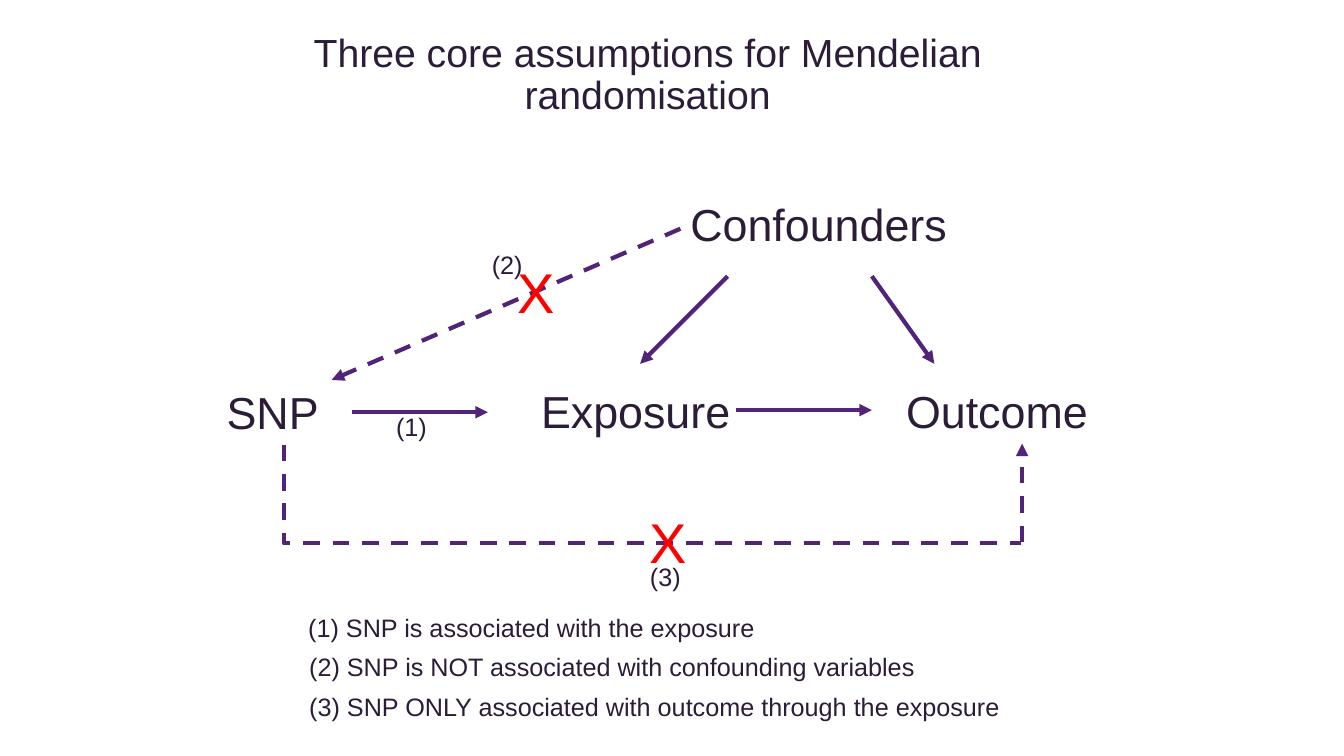
"""Builds a slide with the three core assumptions for Mendelian randomisation."""
import pptx
import pptx.dml.color
import pptx.enum.dml
import pptx.enum.shapes
import pptx.enum.text
import pptx.oxml.ns
import pptx.util
from lxml import etree

Pt = pptx.util.Pt
INK = pptx.dml.color.RGBColor(0x2B, 0x1D, 0x37)
PURPLE = pptx.dml.color.RGBColor(0x51, 0x24, 0x7A)
RED = pptx.dml.color.RGBColor(0xFF, 0x00, 0x00)
DASH = pptx.enum.dml.MSO_LINE.DASH
CENTER = pptx.enum.text.PP_ALIGN.CENTER

TITLE = "Three core assumptions for Mendelian randomisation"
TITLE_BOX = (139.7, 23.8, 645.8, 90)
NODES = [
    ("SNP", 154.8, 271.4, 96.5),
    ("Exposure", 379.4, 270.7, 162.7),
    ("Outcome", 640.1, 270.7, 151.9),
    ("Confounders", 486, 136.8, 221.8),
]
ARROWS = [
    ((251.3, 294.5), (348.5, 294.5), None),
    ((525.6, 293), (622.8, 293), None),
    ((519.8, 197.3), (457.2, 259.9), None),
    ((622.8, 197.3), (667.4, 259.9), None),
    ((486, 163.4), (236.9, 271.4), DASH),
    ((730.1, 387.4), (730.1, 316.8), DASH),
]
BYPASS = [(203, 317.5), (203, 388.1), (729.4, 388.1)]
NUMBERS = [("(1)", 275.8, 290.2), ("(2)", 344.2, 174.2), ("(3)", 457.2, 397.4)]
CROSSES = [(362.9, 180.7), (457.2, 359.3)]
ASSUMPTIONS = [
    ("(1) SNP is associated with the exposure", 213.1, 336.2),
    ("(2) SNP is NOT associated with confounding variables", 213.8, 451.4),
    ("(3) SNP ONLY associated with outcome through the exposure", 213.8, 512.6),
]
ASSUMPTIONS_TOP, ASSUMPTIONS_PITCH = 433.6, 28.4


def set_all(target, values):
    for name, value in values.items():
        setattr(target, name, value)


def add_text(slide, text, box, size, color=INK, wrap=False, frame=None, layout=None):
    shape = slide.shapes.add_textbox(*map(Pt, box))
    text_frame = shape.text_frame
    set_all(text_frame, {"word_wrap": wrap, **(frame or {})})
    paragraph = text_frame.paragraphs[0]
    set_all(paragraph, layout or {})
    run = paragraph.add_run()
    run.text = text
    set_all(run.font, {"name": "Arial", "size": Pt(size)})
    run.font.color.rgb = color


def style_line(line, dash):
    line.color.rgb = PURPLE
    set_all(line, {"width": Pt(3), "dash_style": dash})


def add_arrow(slide, start, end, dash):
    connector = slide.shapes.add_connector(
        pptx.enum.shapes.MSO_CONNECTOR.STRAIGHT, *map(Pt, start + end))
    style_line(connector.line, dash)
    qn = pptx.oxml.ns.qn
    properties = connector.element.spPr
    etree.SubElement(properties.find(qn("a:ln")), qn("a:tailEnd"), type="triangle")
    etree.SubElement(properties, qn("a:effectLst"))


def add_bypass(slide):
    points = [(Pt(x), Pt(y)) for x, y in BYPASS]
    builder = slide.shapes.build_freeform(*points[0])
    builder.add_line_segments(points[1:], close=False)
    shape = builder.convert_to_shape()
    shape.shadow.inherit = False
    shape.fill.background()
    style_line(shape.line, DASH)


def main():
    presentation = pptx.Presentation()
    set_all(presentation, {"slide_width": Pt(960), "slide_height": Pt(540)})
    slide = presentation.slides.add_slide(presentation.slide_layouts[6])

    margins = ("margin_left", "margin_top", "margin_right", "margin_bottom")
    add_text(slide, TITLE, TITLE_BOX, 28, wrap=True, frame=dict.fromkeys(margins, 0),
             layout={"alignment": CENTER, "line_spacing": 0.9})
    for text, left, top, width in NODES:
        add_text(slide, text, (left, top, width, 46), 32, wrap=True)
    for start, end, dash in ARROWS:
        add_arrow(slide, start, end, dash)
    add_bypass(slide)
    for text, left, top in NUMBERS:
        add_text(slide, text, (left, top, 36.7, 29), 18)
    for index, (text, left, width) in enumerate(ASSUMPTIONS):
        top = ASSUMPTIONS_TOP + index * ASSUMPTIONS_PITCH
        add_text(slide, text, (left, top, width, 29), 18)
    for left, top in CROSSES:
        add_text(slide, "X", (left, top, 35.3, 55.4), 40, RED)

    presentation.save("out.pptx")


if __name__ == "__main__":
    main()
